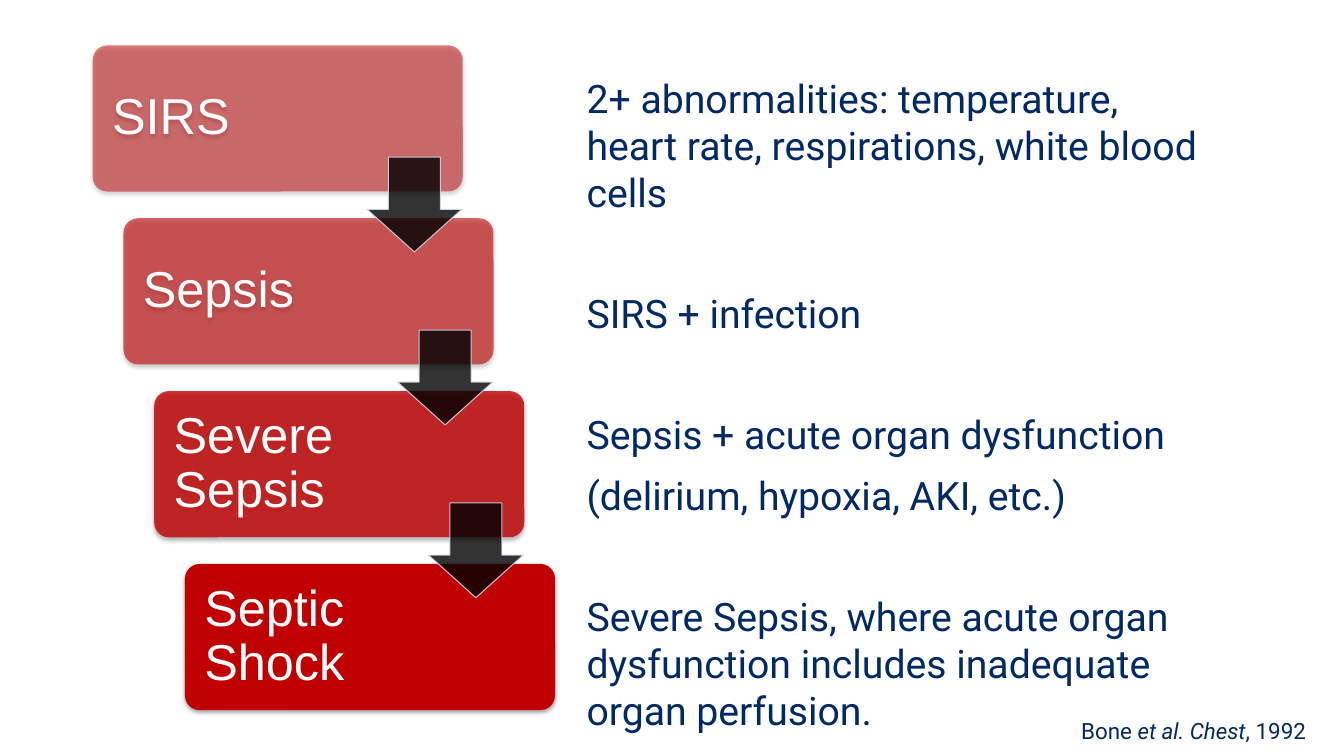
"""Build the slide on the steps from SIRS to septic shock."""
import pptx
import pptx.dml.color
import pptx.enum.shapes
import pptx.enum.text
import pptx.oxml
import pptx.oxml.ns
import pptx.util
from pptx.util import Inches

RED = pptx.dml.color.RGBColor(0xC0, 0x00, 0x00)
NAVY = pptx.dml.color.RGBColor(0x00, 0x29, 0x66)
WHITE = pptx.dml.color.RGBColor(0xFF, 0xFF, 0xFF)
BLACK = pptx.dml.color.RGBColor(0x00, 0x00, 0x00)
PALE_BLUE = pptx.dml.color.RGBColor(0xD0, 0xD8, 0xE8)
SHAPES = pptx.enum.shapes.MSO_SHAPE
ALIGN = pptx.enum.text.PP_ALIGN
ANCHOR = pptx.enum.text.MSO_ANCHOR

STAGES = [("SIRS", 50), ("Sepsis", 60), ("Severe Sepsis", 80), ("Septic Shock", 100)]
STEP_X, STEP_Y = 0.305, 1.715
LINE_GAP, STAGE_GAP = 5.6, 48.8
DEFINITIONS = [
    ("2+ abnormalities: temperature, heart rate, respirations, white blood cells", 0),
    ("SIRS + infection", STAGE_GAP),
    ("Sepsis + acute organ dysfunction", STAGE_GAP),
    ("(delirium, hypoxia, AKI, etc.)", LINE_GAP),
    ("Severe Sepsis, where acute organ dysfunction includes inadequate organ perfusion.",
     STAGE_GAP),
]
SHADOW = (
    '<a:outerShdw xmlns:a="http://schemas.openxmlformats.org/drawingml/2006/main" '
    'blurRad="39370" dist="22860" dir="5400000" rotWithShape="0">'
    '<a:srgbClr val="000000"><a:alpha val="35000"/></a:srgbClr></a:outerShdw>'
)


def set_opacity(fill_parent, percent):
    """Give the solid colour inside an element an opacity."""
    color = fill_parent.find(pptx.oxml.ns.qn("a:solidFill"))[0]
    alpha = color.makeelement(pptx.oxml.ns.qn("a:alpha"), {"val": str(percent * 1000)})
    color.append(alpha)


def write_paragraph(paragraph, text, font="Roboto", size=28, color=NAVY, italic=None,
                    align=ALIGN.LEFT, before=0, after=0, spacing=None):
    """Append a formatted run of text to a paragraph."""
    paragraph.alignment = align
    paragraph.space_before = pptx.util.Pt(before)
    paragraph.space_after = pptx.util.Pt(after)
    paragraph.line_spacing = spacing
    run = paragraph.add_run()
    run.text = text
    run.font.name = font
    run.font.size = pptx.util.Pt(size)
    run.font.color.rgb = color
    run.font.italic = italic


def add_frame(slide, left, top, width, height):
    """Add a wrapping text box and return its text frame."""
    box = slide.shapes.add_textbox(Inches(left), Inches(top), Inches(width), Inches(height))
    box.text_frame.word_wrap = True
    return box.text_frame


def add_stage(slide, index, name, opacity):
    """Add the card of one stage."""
    card = slide.shapes.add_shape(
        SHAPES.ROUNDED_RECTANGLE, Inches(0.92 + index * STEP_X),
        Inches(0.45 + index * STEP_Y), Inches(3.67), Inches(1.45))
    card.adjustments[0] = 0.1
    card.fill.solid()
    card.fill.fore_color.rgb = RED
    set_opacity(card.element.spPr, opacity)
    card.line.fill.background()
    card.shadow.inherit = False
    effects = card.element.spPr.find(pptx.oxml.ns.qn("a:effectLst"))
    effects.append(pptx.oxml.parse_xml(SHADOW))
    label = card.text_frame
    label.word_wrap = True
    label.vertical_anchor = ANCHOR.MIDDLE
    label.margin_left, label.margin_right = Inches(0.15), Inches(1.4)
    write_paragraph(label.paragraphs[0], name, font="Arial", size=36, color=WHITE,
                    after=12.6, spacing=0.9)


def add_progress_arrow(slide, index):
    """Add the arrow from one stage to the next."""
    arrow = slide.shapes.add_shape(
        SHAPES.DOWN_ARROW, Inches(3.64 + index * STEP_X),
        Inches(1.56 + index * STEP_Y), Inches(0.94), Inches(0.94))
    arrow.adjustments[0] = 0.45
    arrow.adjustments[1] = 0.55
    arrow.adjustments[0], arrow.adjustments[1] = 0.55, 0.45
    arrow.shadow.inherit = False
    arrow.fill.solid()
    arrow.fill.fore_color.rgb = BLACK
    set_opacity(arrow.element.spPr, 80)
    arrow.line.color.rgb = PALE_BLUE
    arrow.line.width = pptx.util.Pt(0.75)
    set_opacity(arrow.element.spPr.find(pptx.oxml.ns.qn("a:ln")), 90)


def add_definitions(slide):
    """Add the column that defines the stages."""
    frame = add_frame(slide, 5.72, 0.69, 6.43, 6.3)
    for index, (text, before) in enumerate(DEFINITIONS):
        paragraph = frame.add_paragraph() if index else frame.paragraphs[0]
        write_paragraph(paragraph, text, before=before, after=4)


def add_citation(slide):
    """Add the citation at the lower right."""
    citation = add_frame(slide, 9.57, 7.07, 3.48, 0.3).paragraphs[0]
    for text, italic in [("Bone ", False), ("et al. Chest", True), (", 1992", False)]:
        write_paragraph(citation, text, size=16, italic=italic, align=ALIGN.RIGHT)


def main():
    """Build and save the presentation."""
    deck = pptx.Presentation()
    deck.slide_width, deck.slide_height = Inches(13.33), Inches(7.5)
    slide = deck.slides.add_slide(deck.slide_layouts[6])
    add_citation(slide)
    add_definitions(slide)
    for index, (name, opacity) in enumerate(STAGES):
        add_stage(slide, index, name, opacity)
    for index in range(len(STAGES) - 1):
        add_progress_arrow(slide, index)
    deck.save("out.pptx")


if __name__ == "__main__":
    main()
